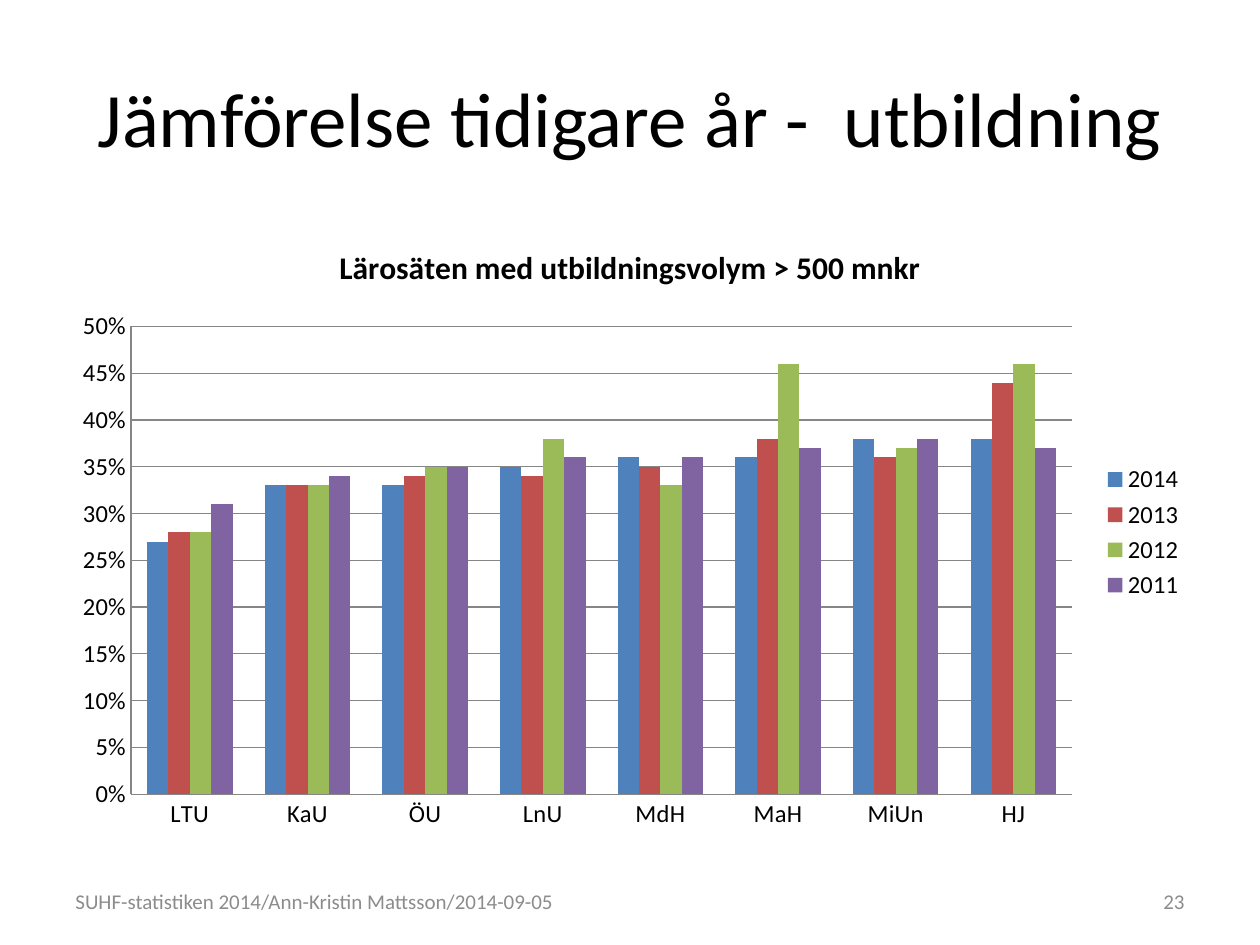
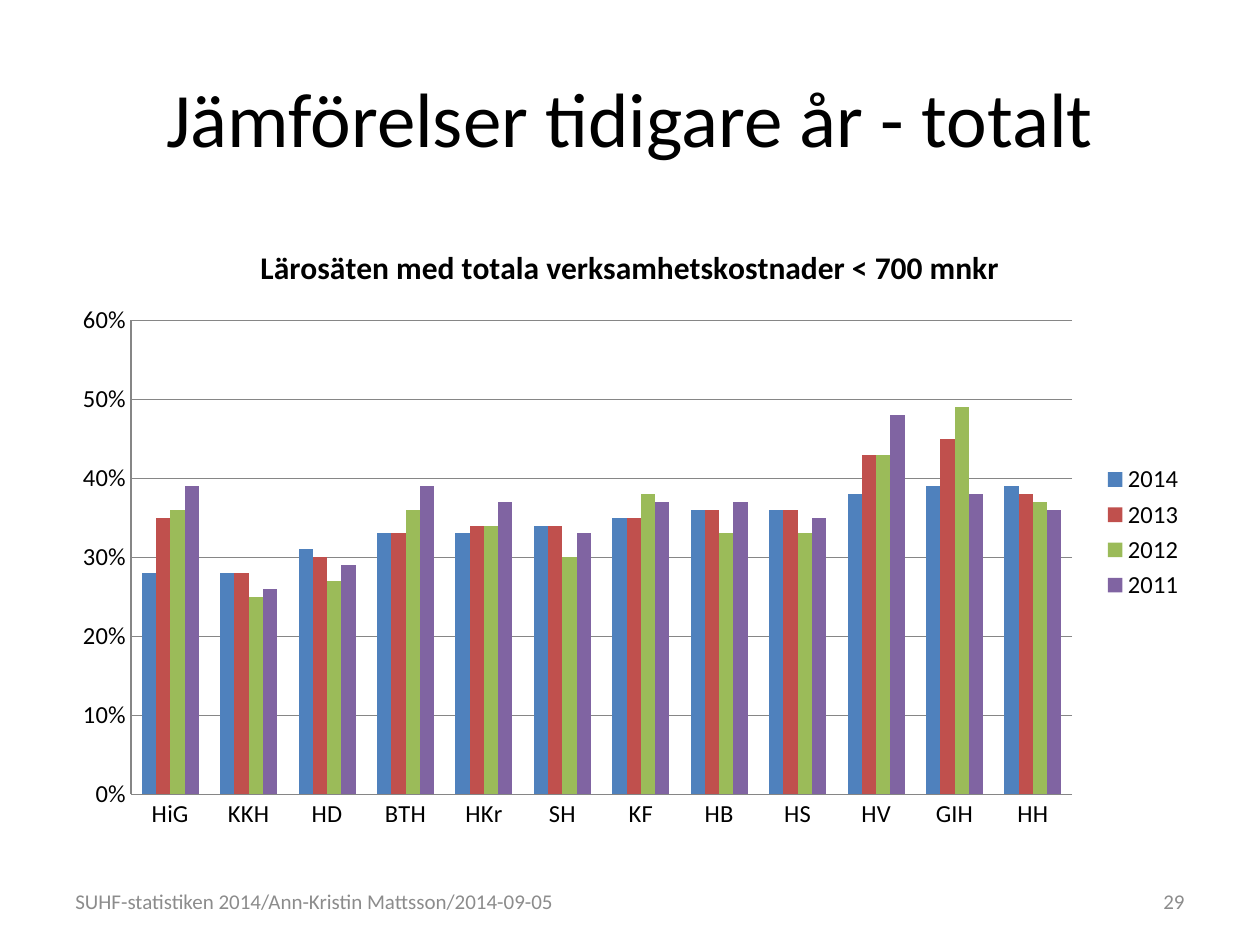
import pptx
import pptx.chart.data
import pptx.dml.color
import pptx.enum.chart
import pptx.enum.text
import pptx.oxml
import pptx.oxml.ns
import pptx.util

Pt = pptx.util.Pt
Align = pptx.enum.text.PP_ALIGN

FONT = "Calibri"
BLACK, FOOTER_GREY, LINE_GREY = "000000", "8C8C8C", "868686"
YEAR_COLOURS = {"2014": "4F81BD", "2013": "C0504D", "2012": "9BBB59", "2011": "8064A2"}
FOOTER = "SUHF-statistiken 2014/Ann-Kristin Mattsson/2014-09-05"

SLIDE_WIDTH, SLIDE_HEIGHT, MARGIN = 720, 540, 36
CONTENT_WIDTH = SLIDE_WIDTH - 2 * MARGIN
TITLE_BOX = (MARGIN, 21.6, CONTENT_WIDTH, 90)
CHART_BOX = (MARGIN, 126, CONTENT_WIDTH, 356.4)
FOOTER_TOP, FOOTER_HEIGHT, NUMBER_WIDTH = 500.4, 28.8, 168
PLOT_LEFT, PLOT_WIDTH, PLOT_BOTTOM = 0.06, 0.83, 0.92

SLIDES = [
    {
        "title": "Jämförelse tidigare år -  utbildning",
        "number": "23",
        "footer_width": 290,
        "chart_title": "Lärosäten med utbildningsvolym > 500 mnkr",
        "axis_maximum": 0.5,
        "axis_step": 0.05,
        "plot_top": 0.17,
        "schools": ["LTU", "KaU", "ÖU", "LnU", "MdH", "MaH", "MiUn", "HJ"],
        "shares": {
            "2014": [0.27, 0.33, 0.33, 0.35, 0.36, 0.36, 0.38, 0.38],
            "2013": [0.28, 0.33, 0.34, 0.34, 0.35, 0.38, 0.36, 0.44],
            "2012": [0.28, 0.33, 0.35, 0.38, 0.33, 0.46, 0.37, 0.46],
            "2011": [0.31, 0.34, 0.35, 0.36, 0.36, 0.37, 0.38, 0.37],
        },
    },
    {
        "title": "Jämförelser tidigare år - totalt",
        "number": "29",
        "footer_width": 312.5,
        "chart_title": "Lärosäten med totala verksamhetskostnader < 700 mnkr",
        "axis_maximum": 0.6,
        "axis_step": 0.1,
        "plot_top": 0.16,
        "schools": ["HiG", "KKH", "HD", "BTH", "HKr", "SH",
                    "KF", "HB", "HS", "HV", "GIH", "HH"],
        "shares": {
            "2014": [0.28, 0.28, 0.31, 0.33, 0.33, 0.34, 0.35, 0.36, 0.36, 0.38, 0.39, 0.39],
            "2013": [0.35, 0.28, 0.3, 0.33, 0.34, 0.34, 0.35, 0.36, 0.36, 0.43, 0.45, 0.38],
            "2012": [0.36, 0.25, 0.27, 0.36, 0.34, 0.3, 0.38, 0.33, 0.33, 0.43, 0.49, 0.37],
            "2011": [0.39, 0.26, 0.29, 0.39, 0.37, 0.33, 0.37, 0.37, 0.35, 0.48, 0.38, 0.36],
        },
    },
]


def colour(hex_string):
    return pptx.dml.color.RGBColor.from_string(hex_string)


def points(box):
    return [Pt(length) for length in box]


def style_font(font, size, hex_string=BLACK, bold=False):
    font.name = FONT
    font.size = Pt(size)
    font.bold = bold
    font.color.rgb = colour(hex_string)


def style_line(line):
    line.color.rgb = colour(LINE_GREY)
    line.width = Pt(0.75)


def write_text(shape, text, size, hex_string, alignment):
    frame = shape.text_frame
    frame.word_wrap = True
    frame.vertical_anchor = pptx.enum.text.MSO_ANCHOR.MIDDLE
    paragraph = frame.paragraphs[0]
    paragraph.alignment = alignment
    run = paragraph.add_run()
    run.text = text
    style_font(run.font, size, hex_string)


def add_title(slide, text):
    title = slide.shapes.title
    title.left, title.top, title.width, title.height = points(TITLE_BOX)
    write_text(title, text, 44, BLACK, Align.CENTER)


def add_footer(slide, footer_width, number):
    number_left = SLIDE_WIDTH - MARGIN - NUMBER_WIDTH
    for left, width, text, alignment in (
        (MARGIN, footer_width, FOOTER, Align.LEFT),
        (number_left, NUMBER_WIDTH, number, Align.RIGHT),
    ):
        box = slide.shapes.add_textbox(*points((left, FOOTER_TOP, width, FOOTER_HEIGHT)))
        write_text(box, text, 12, FOOTER_GREY, alignment)


def fix_plot_area(chart, top):
    """Place the inner plot area, in fractions of the chart frame."""
    plot_area = chart.plots[0]._element.getparent()
    for old_layout in plot_area.findall(pptx.oxml.ns.qn("c:layout")):
        plot_area.remove(old_layout)
    fractions = {"x": PLOT_LEFT, "y": top, "w": PLOT_WIDTH, "h": PLOT_BOTTOM - top}
    settings = '<c:layoutTarget val="inner"/><c:xMode val="edge"/><c:yMode val="edge"/>'
    settings += "".join(f'<c:{key} val="{value:.2f}"/>' for key, value in fractions.items())
    plot_area.insert(0, pptx.oxml.parse_xml(
        f'<c:layout {pptx.oxml.ns.nsdecls("c")}>'
        f"<c:manualLayout>{settings}</c:manualLayout></c:layout>"))


def style_axes(chart, maximum, step):
    for axis in (chart.category_axis, chart.value_axis):
        axis.major_tick_mark = pptx.enum.chart.XL_TICK_MARK.NONE
        axis.minor_tick_mark = pptx.enum.chart.XL_TICK_MARK.NONE
        style_font(axis.tick_labels.font, 14)
        style_line(axis.format.line)
    value_axis = chart.value_axis
    value_axis.minimum_scale = 0
    value_axis.maximum_scale = maximum
    value_axis.major_unit = step
    value_axis.has_major_gridlines = True
    style_line(value_axis.major_gridlines.format.line)
    value_axis.tick_labels.number_format = "0%"
    value_axis.tick_labels.number_format_is_linked = False


def add_share_chart(slide, content):
    data = pptx.chart.data.CategoryChartData(number_format="0%")
    data.categories = content["schools"]
    for year, shares in content["shares"].items():
        data.add_series(year, shares)
    chart = slide.shapes.add_chart(
        pptx.enum.chart.XL_CHART_TYPE.COLUMN_CLUSTERED, *points(CHART_BOX), data).chart
    style_font(chart.font, 10)

    chart.has_title = True
    run = chart.chart_title.text_frame.paragraphs[0].add_run()
    run.text = content["chart_title"]
    style_font(run.font, 18, bold=True)
    chart.chart_title.include_in_layout = False

    chart.has_legend = True
    chart.legend.position = pptx.enum.chart.XL_LEGEND_POSITION.RIGHT
    chart.legend.include_in_layout = False
    style_font(chart.legend.font, 14)

    plot = chart.plots[0]
    plot.gap_width = 150
    plot.overlap = 0
    plot.vary_by_categories = False
    for series in plot.series:
        series.format.fill.solid()
        series.format.fill.fore_color.rgb = colour(YEAR_COLOURS[series.name])

    style_axes(chart, content["axis_maximum"], content["axis_step"])
    fix_plot_area(chart, content["plot_top"])


def main():
    presentation = pptx.Presentation()
    presentation.slide_width = Pt(SLIDE_WIDTH)
    presentation.slide_height = Pt(SLIDE_HEIGHT)
    title_only = presentation.slide_layouts.get_by_name("Title Only")
    for content in SLIDES:
        slide = presentation.slides.add_slide(title_only)
        add_title(slide, content["title"])
        add_footer(slide, content["footer_width"], content["number"])
        add_share_chart(slide, content)
    presentation.save("out.pptx")


if __name__ == "__main__":
    main()
